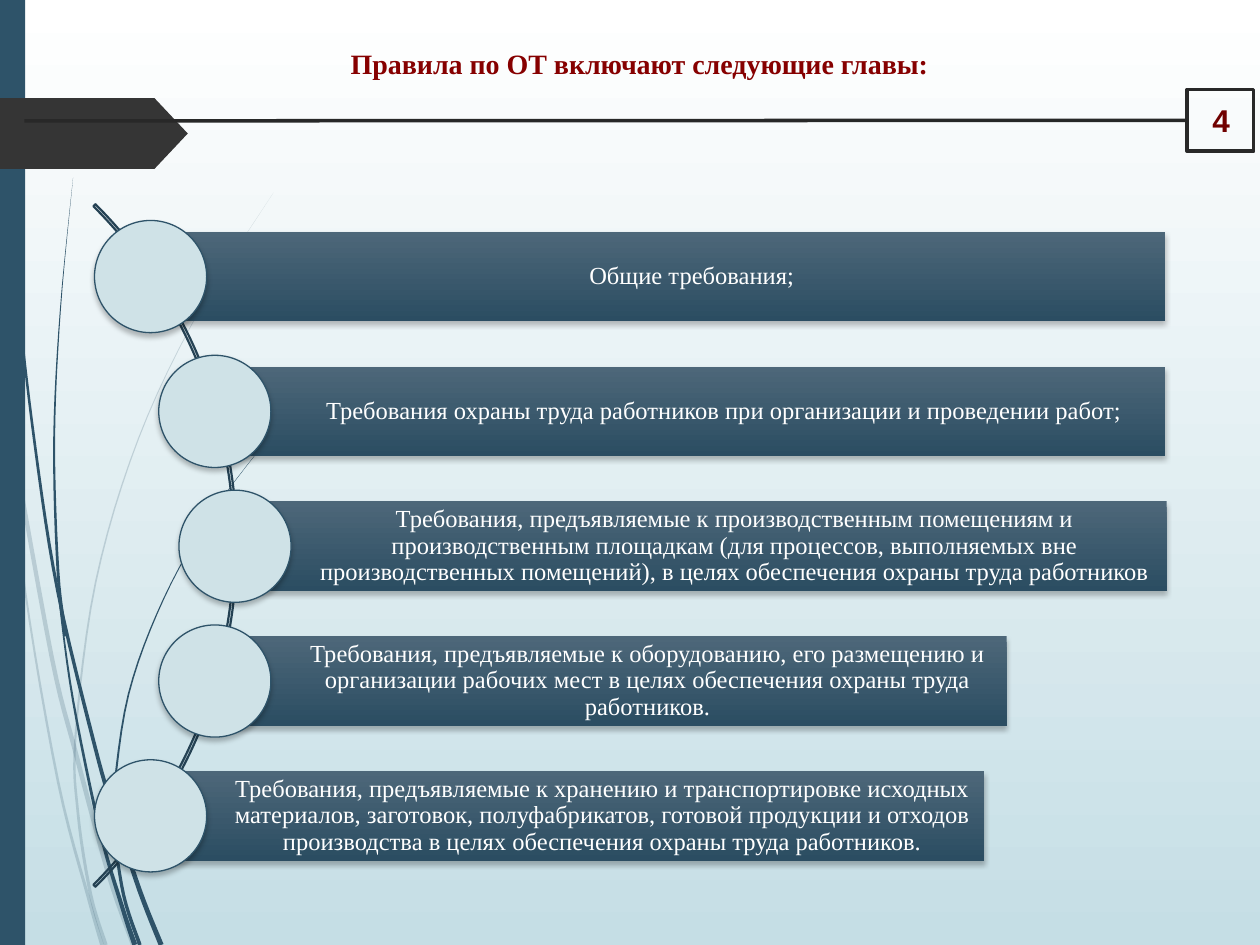
"""Build the slide that lists the chapters of the labour protection rules."""
from dataclasses import dataclass
from math import hypot

from lxml import etree
from pptx import Presentation
from pptx import util as u
from pptx.dml.color import RGBColor
from pptx.enum import shapes, text
from pptx.oxml.ns import qn

Point = tuple[float, float]


@dataclass(frozen=True)
class Theme:
    """Colours, fonts and type sizes of the slide."""
    accent: str = "2E5369"
    arc: str = "254254"
    tag: str = "353535"
    rule: str = "282828"
    title: str = "860000"
    number: str = "700000"
    disc: str = "CFE2E7"
    white: str = "FFFFFF"
    shadow: str = "000000"
    bar: tuple[str, str] = ("4D6779", "2B4D62")
    page: tuple[str, str] = ("FFFFFF", "C5DEE5")
    serif: str = "Times New Roman"
    sans: str = "Arial"
    title_size: int = 16
    number_size: int = 18
    body_size: int = 14


@dataclass(frozen=True)
class Blade:
    """A tapering grass blade along a smooth centre line."""
    points: tuple[Point, ...]
    start: float
    end: float
    opacity: int = 100


@dataclass(frozen=True)
class Chapter:
    """One bar of the list with its disc."""
    disc_left: float
    left: float
    width: float
    label: str


THEME = Theme()
KIND = shapes.MSO_SHAPE
PITCH, FIRST_DISC, DISC = 1.07, 1.75, 0.89
BAR_HEIGHT = 0.71
STEPS = 6

BLADES = (
    Blade(((0, 2.9), (0.1, 3.5), (0.41, 5.21), (0.6, 5.97), (0.86, 6.93), (1.06, 7.5)),
          0.03, 0.04, 20),
    Blade(((0.08, 3.5), (0.2, 4.69), (0.46, 6.2), (0.7, 7.12), (0.81, 7.5)),
          0.01, 0.03, 20),
    Blade(((2.17, 1.53), (1.59, 2.45), (1.1, 3.48), (0.76, 4.62), (0.6, 5.84),
           (0.62, 6.46), (0.72, 7.1), (0.84, 7.5)), 0, 0.03, 20),
    Blade(((0.02, 0), (0.05, 1.1), (0.14, 2.33), (0.28, 3.55), (0.46, 4.7),
           (0.75, 5.91), (0.9, 6.43), (1.11, 7.07), (1.28, 7.5)), 0.01, 0.04),
    Blade(((0.47, 4.77), (0.58, 5.56), (0.79, 6.58), (0.97, 7.2), (1.07, 7.5)), 0.01, 0.04),
    Blade(((0.58, 1.41), (0.48, 2.45), (0.43, 3.49), (0.46, 4.53), (0.52, 5.05)), 0, 0.03),
    Blade(((2.16, 3.44), (1.69, 4.06), (1.3, 4.75), (1.02, 5.51), (0.9, 6.32),
           (0.9, 6.55), (0.98, 7.1), (1.11, 7.5)), 0, 0.03),
)

CHAPTERS = (
    Chapter(0.75, 1.2, 8.05, "Общие требования;"),
    Chapter(1.26, 1.71, 7.54,
            "Требования охраны труда работников при организации и проведении работ;"),
    Chapter(1.42, 1.87, 7.39,
            "Требования, предъявляемые к производственным помещениям и производственным "
            "площадкам (для процессов, выполняемых вне производственных помещений), "
            "в целях обеспечения охраны труда работников"),
    Chapter(1.26, 1.76, 6.23,
            "Требования, предъявляемые к оборудованию, его размещению и организации "
            "рабочих мест в целях обеспечения охраны труда работников."),
    Chapter(0.75, 1.22, 6.59,
            "Требования, предъявляемые к хранению и транспортировке исходных материалов, "
            "заготовок, полуфабрикатов, готовой продукции и отходов производства "
            "в целях обеспечения охраны труда работников."),
)


def rgb(value: str) -> RGBColor:
    """Turn a hex string into a colour."""
    return RGBColor.from_string(value)


def fill_gradient(fill, colours: tuple[str, str]) -> None:
    """Fill from top to bottom with two colours."""
    fill.gradient()
    fill.gradient_angle = 270
    for stop, colour in zip(fill.gradient_stops, colours):
        stop.color.rgb = rgb(colour)


def style_shape(sp, fill=None, line=None, weight: float = 1) -> None:
    """Set fill and outline, and switch the theme shadow off."""
    if isinstance(fill, tuple):
        fill_gradient(sp.fill, fill)
    elif fill:
        sp.fill.solid()
        sp.fill.fore_color.rgb = rgb(fill)
    else:
        sp.fill.background()
    if line:
        sp.line.color.rgb = rgb(line)
        sp.line.width = u.Pt(weight)
    else:
        sp.line.fill.background()
    sp.shadow.inherit = False


def add_preset(slide, kind, box: tuple[float, ...], fill=None, line=None,
               weight: float = 1, adjust: tuple[float, ...] = ()):
    """Add a styled preset shape."""
    sp = slide.shapes.add_shape(kind, *map(u.Inches, box))
    for i, value in enumerate(adjust):
        sp.adjustments[i] = value
    style_shape(sp, fill, line, weight)
    return sp


def add_shadow(sp) -> None:
    """Give a shape a soft shadow below it."""
    effects = sp._element.spPr.find(qn("a:effectLst"))
    shadow = etree.SubElement(effects, qn("a:outerShdw"), blurRad=str(u.Pt(3)),
                              dist=str(u.Pt(2)), dir="5400000", rotWithShape="0")
    colour = etree.SubElement(shadow, qn("a:srgbClr"), val=THEME.shadow)
    etree.SubElement(colour, qn("a:alpha"), val="25000")


def write(tf, label: str, size: int, font: str, colour: str, align, bold: bool = False):
    """Write one formatted paragraph."""
    tf.word_wrap = True
    tf.auto_size = text.MSO_AUTO_SIZE.NONE
    p = tf.paragraphs[0]
    p.text = label
    p.alignment = align
    p.font.size, p.font.name, p.font.bold = u.Pt(size), font, bold
    p.font.color.rgb = rgb(colour)
    return p


def smooth_line(points: tuple[Point, ...]) -> list[Point]:
    """Sample a Catmull-Rom curve through the points."""
    pts = (points[0], *points, points[-1])
    curve = []
    for a, b, c, d in zip(pts, pts[1:], pts[2:], pts[3:]):
        for t in (k / STEPS for k in range(STEPS)):
            curve.append(tuple(
                0.5 * (2 * q + (r - p) * t + (2 * p - 5 * q + 4 * r - s) * t ** 2
                       + (3 * q - p - 3 * r + s) * t ** 3)
                for p, q, r, s in zip(a, b, c, d)))
    return curve + [points[-1]]


def add_blade(slide, blade: Blade) -> None:
    """Draw a grass blade as one closed outline."""
    curve = smooth_line(blade.points)
    last = len(curve) - 1
    left, right = [], []
    for i, (x, y) in enumerate(curve):
        (x0, y0), (x1, y1) = curve[max(i - 1, 0)], curve[min(i + 1, last)]
        half = (blade.start + (blade.end - blade.start) * i / last) / 2
        length = hypot(x1 - x0, y1 - y0)
        dx, dy = half * (y1 - y0) / length, half * (x0 - x1) / length
        left.append((u.Inches(x + dx), u.Inches(y + dy)))
        right.append((u.Inches(x - dx), u.Inches(y - dy)))
    outline = left + right[::-1]
    builder = slide.shapes.build_freeform(*outline[0])
    builder.add_line_segments(outline[1:], close=True)
    sp = builder.convert_to_shape()
    style_shape(sp, THEME.accent)
    if blade.opacity < 100:
        colour = sp._element.spPr.find(f"{qn('a:solidFill')}/{qn('a:srgbClr')}")
        etree.SubElement(colour, qn("a:alpha"), val=str(blade.opacity * 1000))


def add_chapter(slide, row: int, chapter: Chapter) -> None:
    """Draw one bar with its text and disc."""
    top = FIRST_DISC + row * PITCH
    box = (chapter.left, top + (DISC - BAR_HEIGHT) / 2, chapter.width, BAR_HEIGHT)
    bar = add_preset(slide, KIND.RECTANGLE, box, THEME.bar)
    tf = bar.text_frame
    tf.margin_left = u.Inches(0.57)
    tf.margin_right = tf.margin_top = tf.margin_bottom = u.Inches(0.04)
    tf.vertical_anchor = text.MSO_ANCHOR.MIDDLE
    p = write(tf, chapter.label, THEME.body_size, THEME.serif, THEME.white,
              text.PP_ALIGN.CENTER)
    p.line_spacing = 0.9
    disc = add_preset(slide, KIND.OVAL, (chapter.disc_left, top, DISC, DISC),
                      THEME.disc, THEME.accent, 0.75)
    for sp in (bar, disc):
        add_shadow(sp)


def main() -> None:
    """Build and save the presentation."""
    prs = Presentation()
    prs.slide_width, prs.slide_height = u.Inches(10), u.Inches(7.5)
    s = prs.slides.add_slide(prs.slide_layouts[5])
    fill_gradient(s.background.fill, THEME.page)
    for blade in BLADES:
        add_blade(s, blade)
    add_preset(s, KIND.RECTANGLE, (0, 0, 0.2, 7.5), THEME.accent)
    add_preset(s, KIND.PENTAGON, (0, 0.78, 1.49, 0.56), THEME.tag, adjust=(0.47,))
    add_preset(s, KIND.LINE_CALLOUT_1, (9.42, 0.71, 0.53, 0.49), None, THEME.rule, 2,
               (0.5, -0.01, 0.51, -17.41))
    number = s.shapes.add_textbox(*map(u.Inches, (9.51, 0.75, 0.35, 0.4)))
    write(number.text_frame, "4", THEME.number_size, THEME.sans, THEME.number,
          text.PP_ALIGN.RIGHT, True)
    title = s.shapes.title
    title.left, title.top, title.width, title.height = map(u.Inches, (0.29, 0.32, 9.57, 0.37))
    title.text_frame.vertical_anchor = text.MSO_ANCHOR.TOP
    write(title.text_frame, "Правила по ОТ включают следующие главы:", THEME.title_size,
          THEME.serif, THEME.title, text.PP_ALIGN.CENTER, True)
    add_preset(s, KIND.BLOCK_ARC, (-5.78, 0.5, 7.66, 7.66), None, THEME.arc, 1.25,
               (189, 27, 0.003))
    for row, chapter in enumerate(CHAPTERS):
        add_chapter(s, row, chapter)
    prs.save("out.pptx")


if __name__ == "__main__":
    main()
